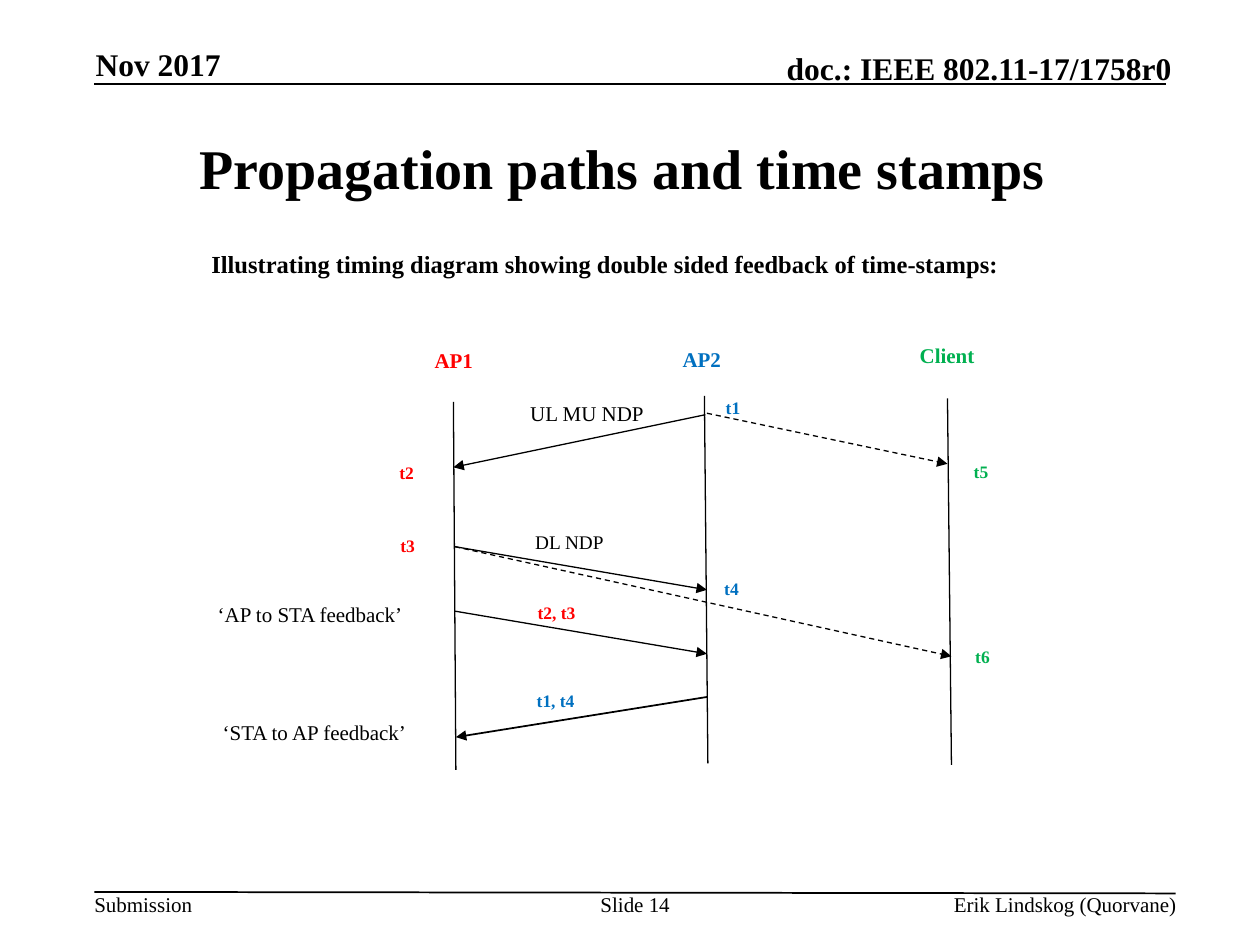
"""Build the slide on propagation paths and time stamps."""
from dataclasses import dataclass

from lxml.etree import SubElement
from pptx import Presentation
from pptx.dml.color import RGBColor
from pptx.enum.dml import MSO_LINE
from pptx.enum.shapes import MSO_CONNECTOR
from pptx.enum.text import MSO_ANCHOR as Anchor, PP_ALIGN as Align
from pptx.oxml.ns import qn
from pptx.slide import Slide
from pptx.util import Cm, Pt


@dataclass(frozen=True)
class Theme:
    """Colours, font and type sizes of the slide."""
    font: str = "Times New Roman"
    ink: str = "000000"
    ap1: str = "FF0000"
    ap2: str = "0070C0"
    client: str = "00B050"
    title: int = 32
    header: int = 18
    caption: int = 14
    body: int = 12
    message: int = 11
    stamp: int = 10


THEME = Theme()


@dataclass(frozen=True)
class Label:
    """A piece of text with its box in centimetres."""
    text: str
    left: float
    top: float
    width: float
    height: float = 0.76
    size: int = THEME.body
    color: str = THEME.ink
    bold: bool = False
    align: Align = Align.LEFT
    anchor: Anchor = Anchor.TOP
    padded: bool = True
    wrap: bool = True


@dataclass(frozen=True)
class Stroke:
    """A straight line between two points in centimetres."""
    x1: float
    y1: float
    x2: float
    y2: float
    weight: float = 0.75
    arrow: bool = False
    dashed: bool = False


def stamp(text: str, left: float, top: float, width: float, color: str) -> Label:
    """Describe a time stamp label."""
    return Label(text, left, top, width, 0.69, THEME.stamp, color, bold=True)


def station(text: str, left: float, top: float, width: float, color: str) -> Label:
    """Describe the heading of a station's time line."""
    return Label(text, left, top, width, color=color, bold=True)


def running_head(text: str, left: float, top: float, width: float, align: Align) -> Label:
    """Describe a bold header text."""
    return Label(text, left, top, width, size=THEME.header, bold=True,
                 align=align, anchor=Anchor.BOTTOM, padded=False)


def footer(text: str, left: float, width: float, align: Align, wrap: bool = True) -> Label:
    """Describe a footer text."""
    return Label(text, left, 17.98, width, 0.51, align=align, padded=False, wrap=wrap)


LABELS = (
    running_head("Nov 2017", 1.93, 0.91, 5.21, Align.LEFT),
    running_head("doc.: IEEE 802.11-17/1758r0", 13.89, 0.99, 9.73, Align.RIGHT),
    Label("Propagation paths and time stamps ", 1.9, 1.9, 21.59, 2.95, THEME.title,
          bold=True, align=Align.CENTER, anchor=Anchor.MIDDLE),
    Label("Illustrating timing diagram showing double sided feedback of time-stamps:",
          4.01, 4.9, 16.48, 0.86, THEME.caption, bold=True, wrap=False),
    station("AP1", 8.51, 6.88, 1.45, THEME.ap1),
    station("AP2", 13.51, 6.86, 1.78, THEME.ap2),
    station("Client", 18.29, 6.78, 1.78, THEME.client),
    Label("UL MU NDP", 10.44, 7.95, 3.02),
    Label("DL NDP", 10.54, 10.57, 2.26, size=THEME.message),
    Label("‘AP to STA feedback’", 4.14, 12.01, 4.27, wrap=False),
    Label("‘STA to AP feedback’", 4.24, 14.38, 4.24, wrap=False),
    stamp("t1", 14.38, 7.87, 1.32, THEME.ap2),
    stamp("t2", 7.8, 9.19, 0.94, THEME.ap1),
    stamp("t3", 7.82, 10.67, 1.04, THEME.ap1),
    stamp("t4", 14.35, 11.53, 1.8, THEME.ap2),
    stamp("t5", 19.38, 9.17, 1.32, THEME.client),
    stamp("t6", 19.41, 12.9, 1.02, THEME.client),
    stamp("t2, t3", 10.59, 12.01, 1.78, THEME.ap1),
    stamp("t1, t4", 10.57, 13.79, 2.24, THEME.ap2),
    footer("Submission", 1.9, 1.98, Align.LEFT, wrap=False),
    footer("Slide 14", 12.07, 1.47, Align.CENTER),
    footer("Erik Lindskog (Quorvane)", 14.88, 8.84, Align.RIGHT),
)

RULES = (
    Stroke(1.9, 1.7, 23.5, 1.7, weight=1),
    Stroke(1.9, 17.98, 23.7, 18.01, weight=1),
)
TIME_LINES = (
    Stroke(9.14, 8.1, 9.19, 15.52),
    Stroke(14.2, 7.98, 14.27, 15.39),
    Stroke(19.1, 8.03, 19.18, 15.42),
)
MESSAGES = (
    Stroke(14.22, 8.36, 9.14, 9.42, arrow=True),
    Stroke(14.25, 8.33, 19.1, 9.35, arrow=True, dashed=True),
    Stroke(9.17, 11.02, 14.25, 11.89, arrow=True),
    Stroke(9.17, 11.02, 19.18, 13.23, arrow=True, dashed=True),
    Stroke(9.17, 12.32, 14.25, 13.18, arrow=True),
    Stroke(14.25, 14.05, 9.19, 14.86, weight=1, arrow=True),
)


def draw_label(slide: Slide, label: Label) -> None:
    """Add one label as a text box."""
    box = slide.shapes.add_textbox(
        Cm(label.left), Cm(label.top), Cm(label.width), Cm(label.height))
    frame = box.text_frame
    frame.word_wrap = label.wrap
    frame.vertical_anchor = label.anchor
    if not label.padded:
        frame.margin_left = frame.margin_right = Cm(0)
        frame.margin_top = frame.margin_bottom = Cm(0)
    paragraph = frame.paragraphs[0]
    paragraph.text = label.text
    paragraph.alignment = label.align
    font = paragraph.font
    font.name = THEME.font
    font.size = Pt(label.size)
    font.bold = label.bold
    font.color.rgb = RGBColor.from_string(label.color)


def draw_stroke(slide: Slide, stroke: Stroke) -> None:
    """Add one straight connector, with an arrowhead at its end if asked."""
    connector = slide.shapes.add_connector(
        MSO_CONNECTOR.STRAIGHT,
        Cm(stroke.x1), Cm(stroke.y1), Cm(stroke.x2), Cm(stroke.y2))
    line = connector.line
    line.color.rgb = RGBColor.from_string(THEME.ink)
    line.width = Pt(stroke.weight)
    if stroke.dashed:
        line.dash_style = MSO_LINE.DASH
    properties = connector._element.spPr
    if stroke.arrow:
        SubElement(properties.find(qn("a:ln")), qn("a:tailEnd"), type="triangle")
    SubElement(properties, qn("a:effectLst"))


def main() -> None:
    """Build and save the presentation."""
    deck = Presentation()
    deck.slide_width, deck.slide_height = Cm(25.4), Cm(19.05)
    slide = deck.slides.add_slide(deck.slide_layouts[6])
    for stroke in RULES + TIME_LINES + MESSAGES:
        draw_stroke(slide, stroke)
    for label in LABELS:
        draw_label(slide, label)
    deck.save("out.pptx")


if __name__ == "__main__":
    main()
